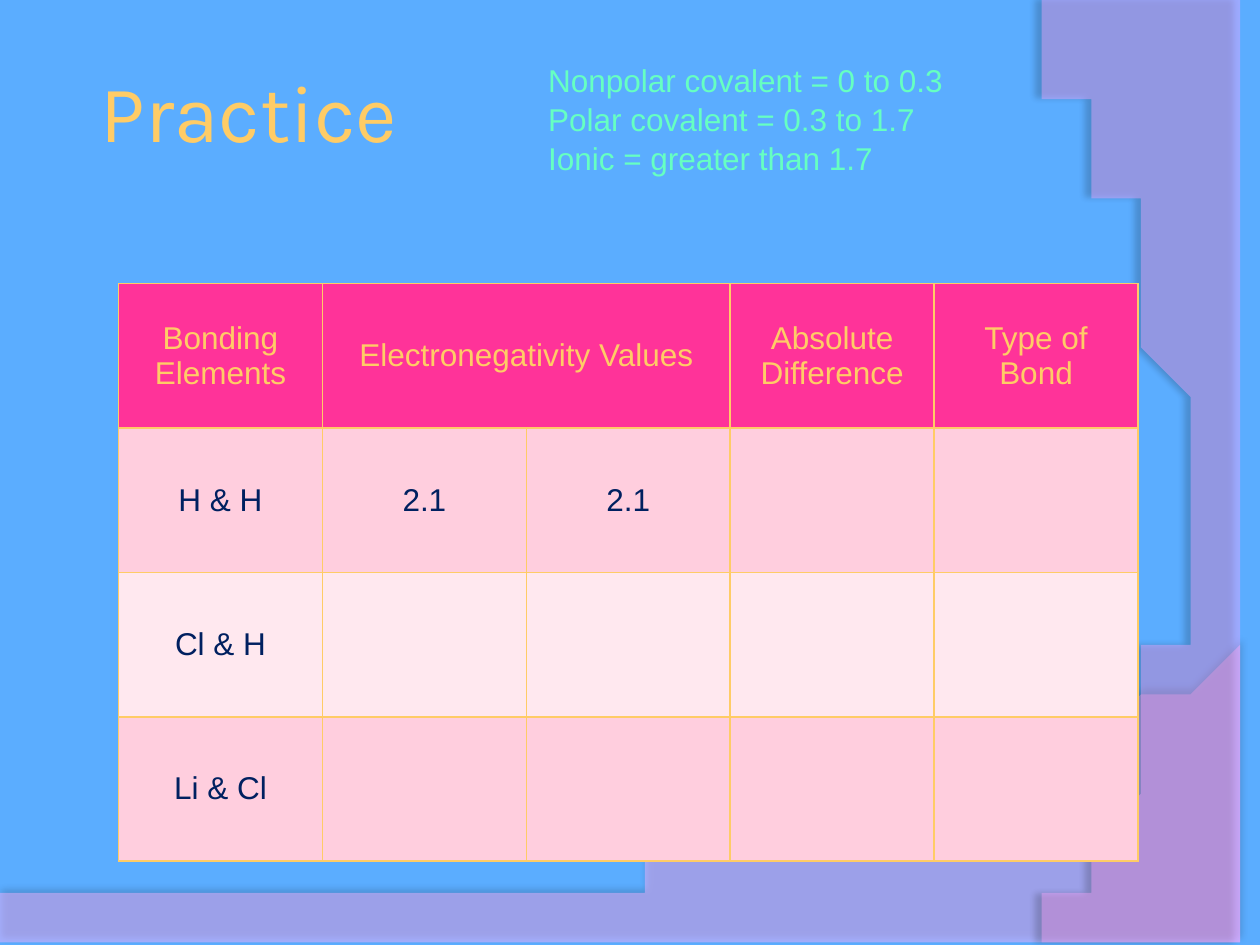
import pptx
import pptx.util
from pptx.dml.color import RGBColor
from pptx.enum.text import MSO_ANCHOR, PP_ALIGN
from pptx.oxml import parse_xml
from pptx.oxml.ns import nsdecls, qn
from pptx.util import Cm, Pt

SKY = RGBColor(0x5B, 0xAD, 0xFF)
GOLD = RGBColor(0xFF, 0xCC, 0x66)
MINT = RGBColor(0x66, 0xFF, 0xC2)
NAVY = RGBColor(0x00, 0x20, 0x60)
HOT_PINK = RGBColor(0xFF, 0x33, 0x99)
PINK = RGBColor(0xFF, 0xCE, 0xDE)
PALE_PINK = RGBColor(0xFF, 0xE8, 0xEF)
ORCHID = RGBColor(0xFF, 0xB4, 0xFF)
MAUVE = RGBColor(0xFF, 0xA7, 0xFF)

# Content
TITLE = "Practice"
RULES = [
    "Nonpolar covalent = 0 to 0.3",
    "Polar covalent = 0.3 to 1.7",
    "Ionic = greater than 1.7",
]
ROWS = [
    ["Bonding Elements", "Electronegativity Values", "", "Absolute Difference", "Type of Bond"],
    ["H & H", "2.1", "2.1", "", ""],
    ["Cl & H", "", "", "", ""],
    ["Li & Cl", "", "", "", ""],
]
COL_W, ROW_H = 4.11, 2.91

# Waves in cm: straight corners, then a Bezier curve from the last corner
WAVES = [
    dict(corners=[(0, 17.91), (0, 19.05), (25.4, 19.05), (25.4, 13.21)],
         curve=[(14.2, 18.52), (9.93, 18.26), (0, 17.91)],
         color=ORCHID, opacity=45, shadow=(35, 4, 3.5, 270)),
    dict(corners=[(25.4, 0.05), (25.4, 19.05), (20.85, 19.05)],
         curve=[(23.75, 15.72), (25.86, 7.62), (20.32, 0)],
         color=MAUVE, opacity=40, shadow=(45, 4, 4, 180)),
]


def bezier(points, steps=60):
    a, b, c, d = points
    for i in range(1, steps + 1):
        t = i / steps
        u = 1 - t
        yield tuple(u**3 * a[k] + 3 * u * u * t * b[k] + 3 * u * t * t * c[k] + t**3 * d[k]
                    for k in (0, 1))


def add_wave(s, corners, curve, color, opacity, shadow):
    fb = s.shapes.build_freeform(*corners[0], scale=Cm(1))
    fb.add_line_segments(corners[1:] + list(bezier(corners[-1:] + curve)), close=True)
    sp = fb.convert_to_shape()
    sp.fill.solid()
    sp.fill.fore_color.rgb = color
    sp.line.fill.background()
    clr = sp.fill._xPr.find(qn("a:solidFill"))[0]
    clr.append(parse_xml(f'<a:alpha {nsdecls("a")} val="{opacity * 1000}"/>'))
    alpha, blur, dist, angle = shadow
    sp._element.spPr.append(parse_xml(
        f'<a:effectLst {nsdecls("a")}><a:outerShdw blurRad="{Pt(blur)}" dist="{Pt(dist)}" '
        f'dir="{angle * 60000}" algn="ctr" rotWithShape="0"><a:srgbClr val="000000">'
        f'<a:alpha val="{alpha * 1000}"/></a:srgbClr></a:outerShdw></a:effectLst>'))


def add_borders(cell, color, width):
    for side in "LRTB":
        cell._tc.get_or_add_tcPr().append(parse_xml(
            f'<a:ln{side} {nsdecls("a")} w="{Pt(width)}"><a:solidFill>'
            f'<a:srgbClr val="{color}"/></a:solidFill></a:ln{side}>'))


def set_font(p, name, size, color):
    p.font.name = name
    p.font.size = Pt(size)
    p.font.color.rgb = color


prs = pptx.Presentation()
prs.slide_width, prs.slide_height = Cm(25.4), Cm(19.05)
s = prs.slides.add_slide(prs.slide_layouts[5])
s.background.fill.solid()
s.background.fill.fore_color.rgb = SKY

# Title
title = s.shapes.title
title.left, title.top, title.width, title.height = Cm(1.9), Cm(0.64), Cm(21.6), Cm(3.18)
tf = title.text_frame
tf.text = TITLE
tf.vertical_anchor = MSO_ANCHOR.MIDDLE
tf.margin_left = tf.margin_right = tf.margin_top = tf.margin_bottom = Cm(0.13)
tf.paragraphs[0].alignment = PP_ALIGN.LEFT
set_font(tf.paragraphs[0], "Karla", 46, GOLD)

# Background waves
for wave in WAVES:
    add_wave(s, **wave)

# Bond table
n_rows, n_cols = len(ROWS), len(ROWS[0])
table = s.shapes.add_table(n_rows, n_cols, Cm(2.39), Cm(5.72),
                           Cm(COL_W * n_cols), Cm(ROW_H * n_rows)).table
for col in table.columns:
    col.width = Cm(COL_W)
for i, texts in enumerate(ROWS):
    table.rows[i].height = Cm(ROW_H)
    fill = HOT_PINK if i == 0 else PINK if i % 2 else PALE_PINK
    for j, text in enumerate(texts):
        cell = table.cell(i, j)
        cell.text = text
        cell.vertical_anchor = MSO_ANCHOR.MIDDLE
        add_borders(cell, GOLD, 1)
        cell.fill.solid()
        cell.fill.fore_color.rgb = fill
        p = cell.text_frame.paragraphs[0]
        p.alignment = PP_ALIGN.CENTER
        set_font(p, "Arial", 18, NAVY if i else GOLD)
table.cell(0, 1).merge(table.cell(0, 2))

# Bond type rules
tf = s.shapes.add_textbox(Cm(10.8), Cm(1.07), Cm(13.77), Cm(3.33)).text_frame
tf.word_wrap = True
tf.text = "\n".join(RULES)
for p in tf.paragraphs:
    p.line_spacing = 1.04
    set_font(p, "Arial", 18, MINT)

prs.save("out.pptx")
